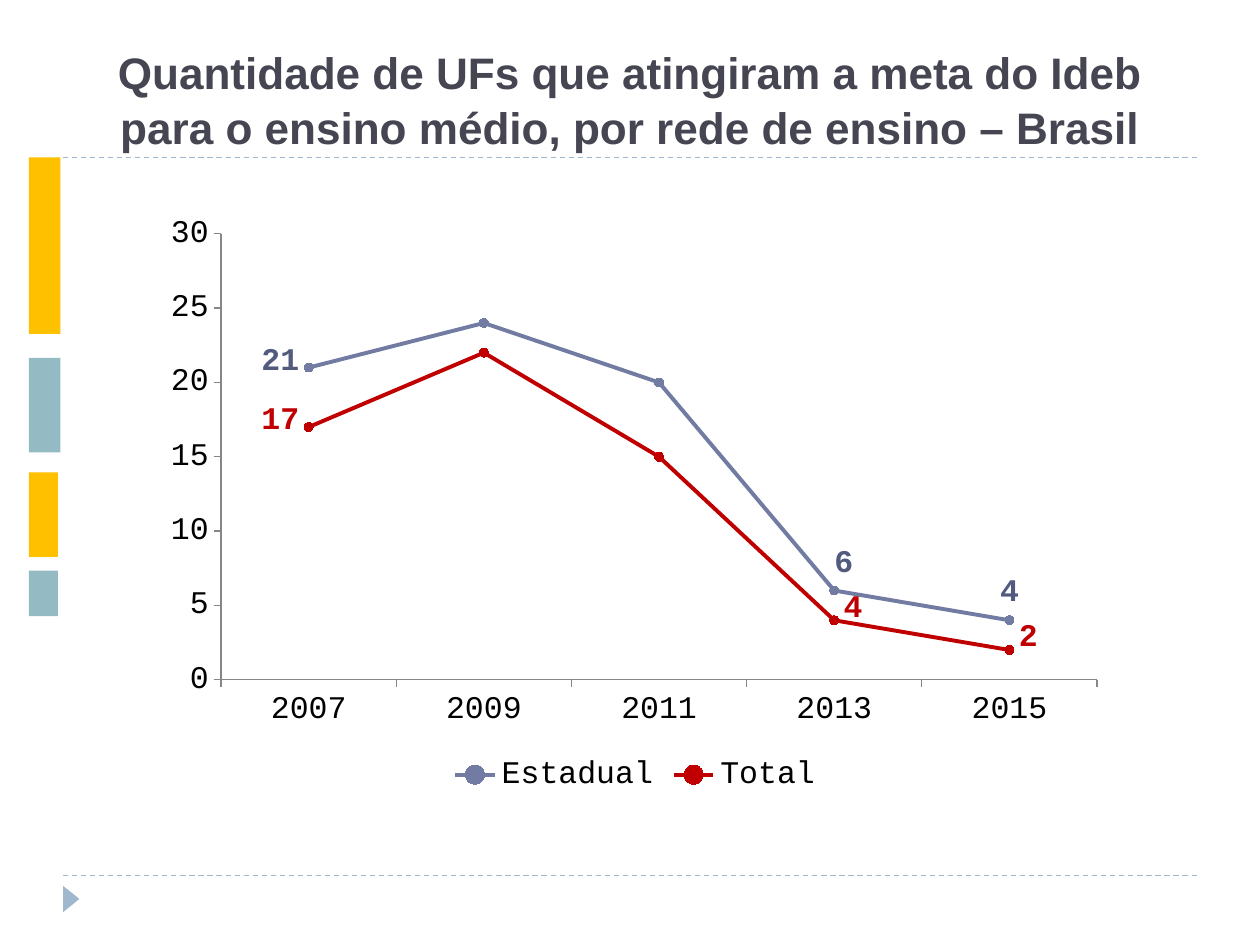
import pptx
import pptx.chart.data
import pptx.dml.color
import pptx.enum.chart
import pptx.enum.dml
import pptx.enum.shapes
import pptx.enum.text
import pptx.oxml
import pptx.oxml.ns
import pptx.util

WIDTH, HEIGHT = 10, 7.5
MARGIN, TITLE_LINE, FOOTER_LINE = 0.5, 1.25, 6.95
COLORS = {
    "title": "464653", "rule": "9FB8CD", "gold": "FFC000", "teal": "94BAC3",
    "state": "727CA3", "state_label": "525B7E", "total": "C00000",
    "axis": "868686", "text": "000000",
}
YEARS = ["2007", "2009", "2011", "2013", "2015"]
POSITION = pptx.enum.chart.XL_LABEL_POSITION
# Labels map a point's index to its position and its shift as shares of the chart.
SERIES = [
    {"name": "Estadual", "values": [21, 24, 20, 6, 4],
     "color": "state", "label_color": "state_label",
     "labels": {0: (POSITION.LEFT, 0, -0.01), 3: (POSITION.ABOVE, 0.01, 0),
                4: (POSITION.ABOVE, 0, 0)}},
    {"name": "Total", "values": [17, 22, 15, 4, 2],
     "color": "total", "label_color": "total",
     "labels": {0: (POSITION.LEFT, 0, -0.01), 3: (POSITION.RIGHT, 0, -0.02),
                4: (POSITION.RIGHT, 0, -0.02)}},
]


def rgb(name):
    return pptx.dml.color.RGBColor.from_string(COLORS[name])


def inches(*lengths):
    return [pptx.util.Inches(length) for length in lengths]


def paint(fill, color):
    fill.solid()
    fill.fore_color.rgb = rgb(color)


def format_font(font, name, size, color, bold=False):
    font.name, font.size, font.bold = name, pptx.util.Pt(size), bold
    font.color.rgb = rgb(color)


def add_rule(page, top):
    """Draw a dashed line between the side margins."""
    rule = page.shapes.add_connector(
        pptx.enum.shapes.MSO_CONNECTOR.STRAIGHT,
        *inches(MARGIN, top, WIDTH - MARGIN, top))
    rule.line.color.rgb = rgb("rule")
    rule.line.width = pptx.util.Pt(0.75)
    rule.line.dash_style = pptx.enum.dml.MSO_LINE.DASH
    properties = rule._element.spPr
    properties.append(properties.makeelement(pptx.oxml.ns.qn("a:effectLst")))


def add_block(page, kind, area, color, rotation=0):
    block = page.shapes.add_shape(kind, *inches(*area))
    block.shadow.inherit = False
    block.rotation = rotation
    paint(block.fill, color)
    block.line.fill.background()


def add_decoration(page):
    kinds = pptx.enum.shapes.MSO_SHAPE
    add_rule(page, FOOTER_LINE)
    add_rule(page, TITLE_LINE)
    add_block(page, kinds.ISOSCELES_TRIANGLE, (0.46, 7.07, 0.21, 0.13), "rule", 90)
    bars = [(1.25, 0.25, 1.4, "gold"), (2.84, 0.25, 0.75, "teal"),
            (3.75, 0.23, 0.67, "gold"), (4.53, 0.23, 0.36, "teal")]
    for top, width, height, color in bars:
        add_block(page, kinds.RECTANGLE, (0.23, top, width, height), color)


def set_title(page, text, top=0.17):
    title = page.shapes.title
    title.left, title.top, title.width, title.height = inches(
        MARGIN, top, WIDTH - 2 * MARGIN, TITLE_LINE - top)
    frame = title.text_frame
    frame.text = text
    frame.word_wrap = True
    frame.auto_size = pptx.enum.text.MSO_AUTO_SIZE.NONE
    frame.vertical_anchor = pptx.enum.text.MSO_ANCHOR.BOTTOM
    frame.margin_bottom = pptx.util.Inches(0.03)
    para = frame.paragraphs[0]
    para.alignment = pptx.enum.text.PP_ALIGN.CENTER
    para.line_spacing = 1.05
    format_font(para.runs[0].font, "Arial", 25.2, "title", bold=True)


def make_layout(**shares):
    """Return a manual chart layout; each share is an element and its value."""
    items = "".join(f'<c:{tag} val="{value}"/>' for tag, value in shares.items())
    return pptx.oxml.parse_xml(
        f'<c:layout {pptx.oxml.ns.nsdecls("c")}>'
        f"<c:manualLayout>{items}</c:manualLayout></c:layout>")


def place_plot(chart, x, y, w, h):
    plot_area = chart._chartSpace.chart.plotArea
    for layout in plot_area.xpath("c:layout"):
        plot_area.remove(layout)
    plot_area.insert(0, make_layout(layoutTarget="inner", xMode="edge",
                                    yMode="edge", x=x, y=y, w=w, h=h))


def format_axis(axis):
    axis.has_major_gridlines = False
    axis.major_tick_mark = pptx.enum.chart.XL_TICK_MARK.OUTSIDE
    axis.minor_tick_mark = pptx.enum.chart.XL_TICK_MARK.NONE
    axis.format.line.color.rgb = rgb("axis")
    axis.format.line.width = pptx.util.Pt(0.75)


def format_series(series, style):
    series.smooth = False
    series.format.line.color.rgb = rgb(style["color"])
    series.format.line.width = pptx.util.Pt(2.25)
    series.marker.style = pptx.enum.chart.XL_MARKER_STYLE.CIRCLE
    series.marker.size = 5
    paint(series.marker.format.fill, style["color"])
    series.marker.format.line.color.rgb = rgb(style["color"])
    series.data_labels.show_value = False
    for index, (position, x, y) in style["labels"].items():
        label = series.points[index].data_label
        format_font(label.font, "Courier New", 18, style["label_color"], bold=True)
        label.position = position
        if x or y:
            element = series._element.xpath(f"c:dLbls/c:dLbl[c:idx/@val={index}]")[0]
            element.insert(1, make_layout(x=x, y=y))


def add_line_chart(page):
    data = pptx.chart.data.CategoryChartData(number_format="###0")
    data.categories = YEARS
    for style in SERIES:
        data.add_series(style["name"], style["values"])
    chart = page.shapes.add_chart(
        pptx.enum.chart.XL_CHART_TYPE.LINE_MARKERS,
        *inches(1.22, 1.62, 7.64, 4.72), data).chart
    format_font(chart.font, "Courier New", 18, "text")
    chart.has_title = False
    chart.has_legend = True
    chart.legend.position = pptx.enum.chart.XL_LEGEND_POSITION.BOTTOM
    chart.legend.include_in_layout = False
    chart.plots[0].vary_by_categories = False
    place_plot(chart, 0.07, 0.05, 0.91, 0.75)
    for axis in (chart.category_axis, chart.value_axis):
        format_axis(axis)
    scale = chart.value_axis
    scale.minimum_scale, scale.maximum_scale, scale.major_unit = 0, 30, 5
    scale.tick_labels.number_format = "###0"
    scale.tick_labels.number_format_is_linked = False
    for series, style in zip(chart.plots[0].series, SERIES):
        format_series(series, style)


def main():
    deck = pptx.Presentation()
    deck.slide_width, deck.slide_height = inches(WIDTH, HEIGHT)
    page = deck.slides.add_slide(deck.slide_layouts.get_by_name("Title Only"))
    add_decoration(page)
    set_title(page, "Quantidade de UFs que atingiram a meta do Ideb "
                    "para o ensino médio, por rede de ensino – Brasil")
    add_line_chart(page)
    deck.save("out.pptx")


if __name__ == "__main__":
    main()
